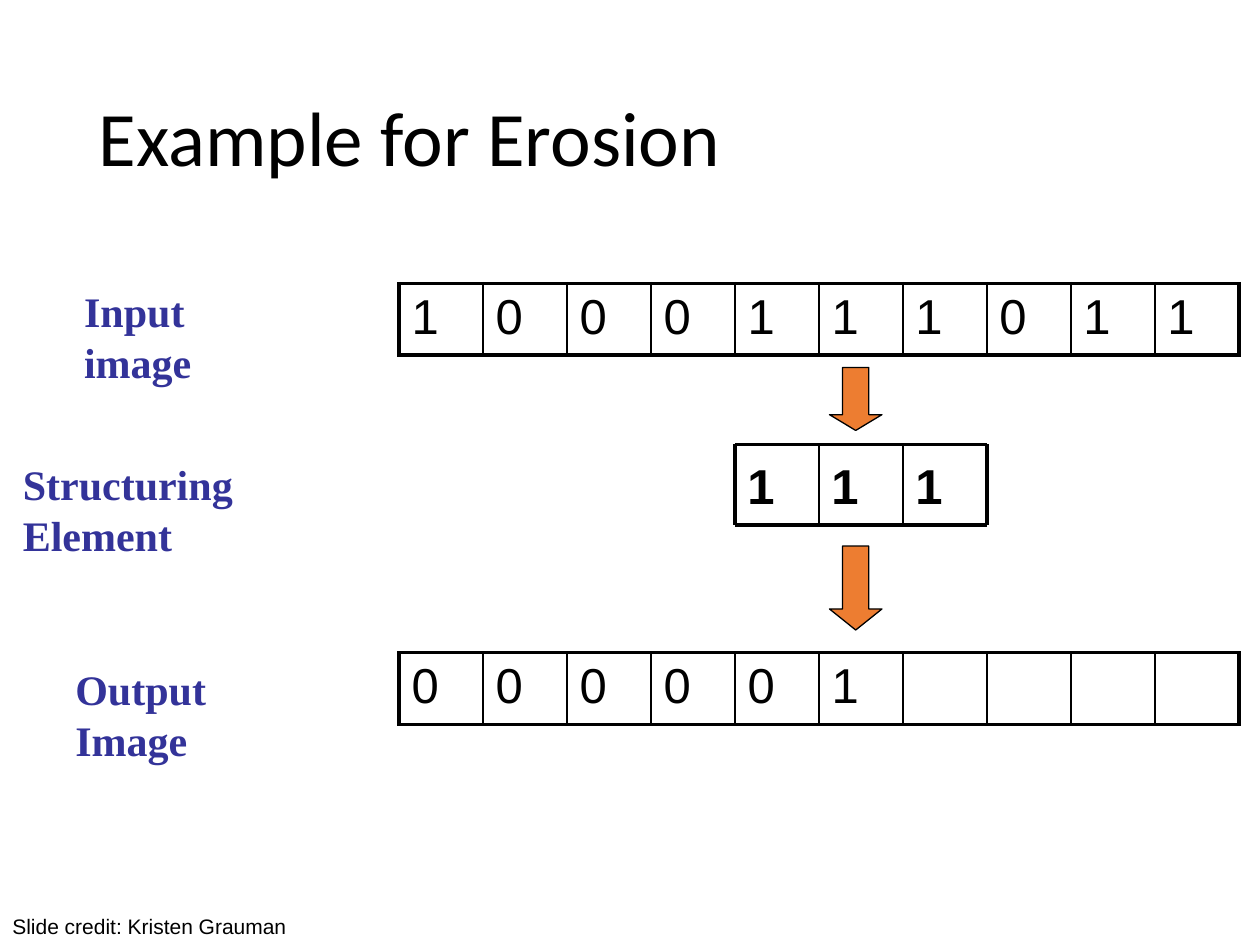
from lxml.etree import SubElement as Sub
from pptx import Presentation
from pptx.dml.color import RGBColor
from pptx.enum.shapes import MSO_CONNECTOR as Link, MSO_SHAPE as Kind
from pptx.enum.text import MSO_ANCHOR as Anchor
from pptx.oxml.ns import qn
from pptx.util import Pt

BLACK = RGBColor(0, 0, 0)
NAVY = RGBColor(0x33, 0x33, 0x99)
ORANGE = RGBColor(0xED, 0x7D, 0x31)
THICK, THIN = 2.25, 1
LEFT, CELL = 228, 48


def write(frame, text, font="Arial", size=28, color=BLACK, bold=False,
          gap=None, anchor=Anchor.TOP):
    frame.word_wrap = True
    frame.vertical_anchor = anchor
    para = frame.paragraphs[0]
    para.text = text
    para.line_spacing = gap
    face = para.font
    face.name, face.size, face.bold = font, Pt(size), bold
    face.color.rgb = color


def label(slide, text, x, y, w, h, **form):
    box = slide.shapes.add_textbox(Pt(x), Pt(y), Pt(w), Pt(h))
    write(box.text_frame, text, **form)


def edge(cell, side, width):
    line = Sub(cell._tc.get_or_add_tcPr(), qn("a:ln" + side), w=str(Pt(width)))
    fill = Sub(line, qn("a:solidFill"))
    Sub(fill, qn("a:srgbClr"), val=str(BLACK))


def strip(slide, bits, y, count=10, high=40.3):
    shape = slide.shapes.add_table(1, count, Pt(LEFT), Pt(y),
                                   Pt(CELL * count), Pt(high))
    table = shape.table
    table.first_row = table.horz_banding = False
    for i, bit in enumerate(bits.ljust(count)):
        table.columns[i].width = Pt(CELL)
        cell = table.cell(0, i)
        write(cell.text_frame, bit.strip())
        edge(cell, "L", THIN if i else THICK)
        edge(cell, "R", THIN if i < count - 1 else THICK)
        edge(cell, "T", THICK)
        edge(cell, "B", THICK)
        cell.fill.background()


def rule(slide, x1, y1, x2, y2, width):
    line = slide.shapes.add_connector(Link.STRAIGHT, Pt(x1), Pt(y1),
                                      Pt(x2), Pt(y2))
    line.line.color.rgb = BLACK
    line.line.width = Pt(width)
    Sub(line._element.spPr, qn("a:effectLst"))


def probe(slide, bits, x, y, high):
    count = len(bits)
    end = x + CELL * count
    for i, bit in enumerate(bits):
        label(slide, bit, x + CELL * i, y, CELL, high, bold=True,
              anchor=Anchor.MIDDLE)
    for row in (y, y + high):
        rule(slide, x, row, end, row, THICK)
    for i in range(count + 1):
        col = x + CELL * i
        rule(slide, col, y, col, y + high, THIN if 0 < i < count else THICK)


def arrow(slide, y, high, head):
    shape = slide.shapes.add_shape(Kind.DOWN_ARROW, Pt(474), Pt(y),
                                   Pt(30), Pt(high))
    shape.adjustments[0], shape.adjustments[1] = 0.5, head
    shape.shadow.inherit = False
    shape.fill.solid()
    shape.fill.fore_color.rgb = ORANGE
    shape.line.color.rgb = BLACK
    shape.line.width = Pt(0.75)


def main():
    """Build the erosion example slide."""
    deck = Presentation()
    deck.slide_width, deck.slide_height = Pt(720), Pt(540)
    slide = deck.slides.add_slide(deck.slide_layouts[6])
    label(slide, "Example for Erosion", 49.5, 28.75, 621, 104.4,
          font="Calibri", size=44, gap=0.9, anchor=Anchor.MIDDLE)
    names = (("Input image", 41, 159, 129.6),
             ("Structuring Element", 6, 258, 208),
             ("Output Image", 36, 375, 147))
    for text, x, y, w in names:
        label(slide, text, x, y, w, 36, font="Times New Roman", size=24,
              color=NAVY, bold=True, gap=Pt(29.2))
    strip(slide, "1000111011", 162)
    strip(slide, "000001", 373)
    probe(slide, "111", LEFT + 4 * CELL, 254, 46)
    arrow(slide, 210, 36, 0.3)
    arrow(slide, 312, 48, 0.4)
    label(slide, "Slide credit: Kristen Grauman", 0, 518.4, 330, 21.6, size=12)
    deck.save("out.pptx")


if __name__ == "__main__":
    main()
